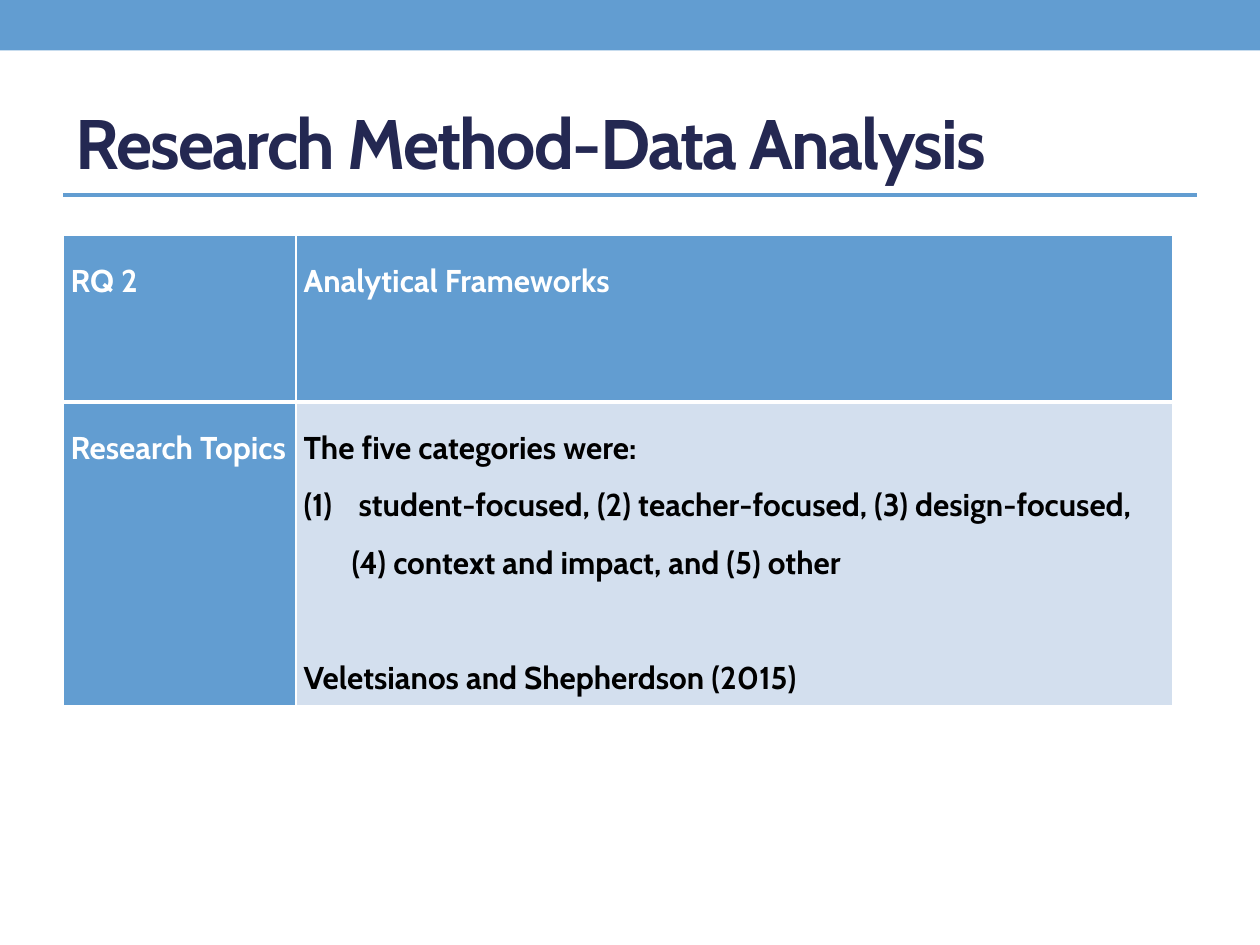
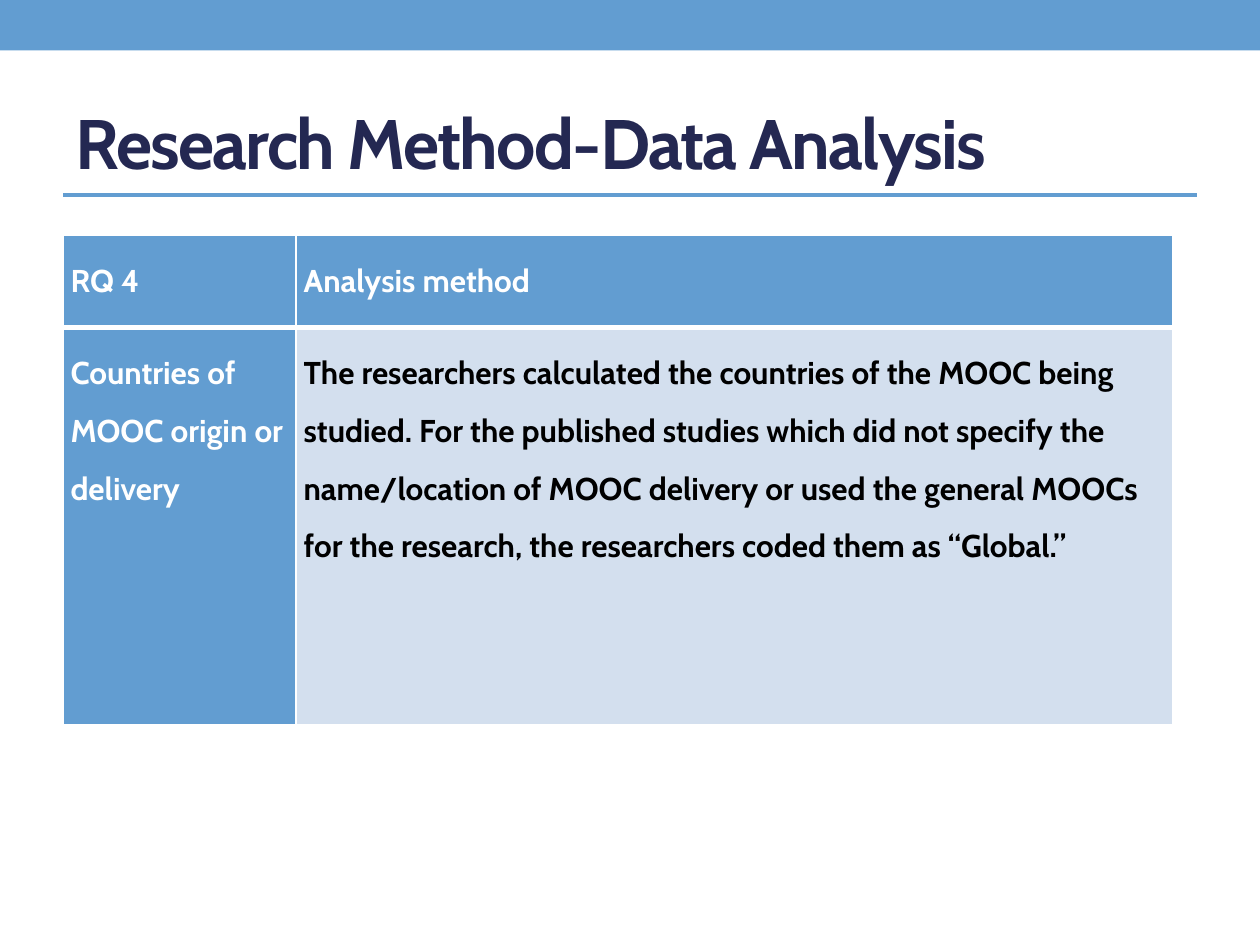
"""Build two research-method slides, each with a title and an analysis table."""
from dataclasses import dataclass

from lxml import etree
from pptx import Presentation
from pptx import util as u
from pptx.dml.color import RGBColor
from pptx.enum import shapes, text
from pptx.oxml import ns

BLUE = RGBColor(0x62, 0x9D, 0xD1)
NAVY = RGBColor(0x24, 0x28, 0x52)
PALE_BLUE = RGBColor(0xD3, 0xDF, 0xEE)
WHITE = RGBColor(0xFF, 0xFF, 0xFF)
BLACK = RGBColor(0x00, 0x00, 0x00)
FONT = "Cabin"
TITLE = "Research Method-Data Analysis"
MARGIN = u.Inches(0.5)
COLUMN_WIDTHS = (1.85, 6.96)
CELL_INSET = u.Inches(0.06)


@dataclass(frozen=True)
class Line:
    """One paragraph of a table cell."""
    words: str
    numbered: bool = False
    space_before: float = 0


@dataclass(frozen=True)
class AnalysisSlide:
    """Contents and row heights of one analysis table."""
    question: str
    method_heading: str
    topic: str
    method: tuple[Line, ...]
    row_heights: tuple[float, float]


ANALYSES = (
    AnalysisSlide(
        "RQ 2", "Analytical Frameworks", "Research Topics",
        (
            Line("The five categories were:"),
            Line(" student-focused, (2) teacher-focused, (3) design-focused, "
                 "(4) context and impact, and (5) other", numbered=True),
            Line("Veletsianos and Shepherdson (2015)", space_before=33),
        ),
        (1.32, 2.37),
    ),
    AnalysisSlide(
        "RQ 4", "Analysis method", "Countries of MOOC origin or delivery",
        (
            Line("The researchers calculated the countries of the MOOC being studied. "
                 "For the published studies which did not specify the name/location of "
                 "MOOC delivery or used the general MOOCs for the research, the "
                 "researchers coded them as “Global.”"),
        ),
        (0.73, 3.15),
    ),
)


def add_text(paragraph, words: str, *, size: float, color: RGBColor,
             line_spacing: float = 1, space_before: float = 0,
             tracking: float = 0) -> None:
    """Write bold text into a paragraph with the given format."""
    paragraph.alignment = text.PP_ALIGN.LEFT
    paragraph.line_spacing = line_spacing
    paragraph.space_before = u.Pt(space_before)
    run = paragraph.add_run()
    run.text = words
    run.font.name = FONT
    run.font.size = u.Pt(size)
    run.font.bold = True
    run.font.color.rgb = color
    if tracking:
        run.font._element.set("spc", str(round(tracking * 100)))


def number_paragraph(paragraph) -> None:
    """Give a paragraph a hanging number in parentheses."""
    properties = paragraph._p.get_or_add_pPr()
    indent = u.Inches(0.38)
    properties.set("marL", str(indent))
    properties.set("indent", str(-indent))
    bullet = etree.SubElement(properties, ns.qn("a:buAutoNum"))
    bullet.set("type", "arabicParenBoth")


def set_borders(cell, widths: dict[str, float]) -> None:
    """Draw white borders whose widths are given by side, in schema order."""
    properties = cell._tc.get_or_add_tcPr()
    for side, width in widths.items():
        border = etree.SubElement(properties, ns.qn(f"a:ln{side}"), w=str(u.Pt(width)))
        fill = etree.SubElement(border, ns.qn("a:solidFill"))
        etree.SubElement(fill, ns.qn("a:srgbClr"), val=str(WHITE))


def fill_cell(cell, lines: tuple[Line, ...], *, fill: RGBColor, color: RGBColor,
              header: bool) -> None:
    """Format a table cell and write its paragraphs."""
    set_borders(cell, {"L": 1, "R": 1, "T": 1 if header else 3, "B": 3 if header else 1})
    cell.fill.solid()
    cell.fill.fore_color.rgb = fill
    cell.margin_left = cell.margin_right = CELL_INSET
    cell.margin_top = cell.margin_bottom = CELL_INSET
    for index, line in enumerate(lines):
        frame = cell.text_frame
        paragraph = frame.add_paragraph() if index else frame.paragraphs[0]
        add_text(paragraph, line.words, size=18, color=color, line_spacing=1.5,
                 space_before=line.space_before)
        if line.numbered:
            number_paragraph(paragraph)


def add_frame(slide, slide_width: int) -> None:
    """Draw the top band, the title and the rule below it."""
    band = slide.shapes.add_shape(shapes.MSO_SHAPE.RECTANGLE, 0, 0,
                                  slide_width, u.Inches(0.4))
    band.shadow.inherit = False
    band.fill.solid()
    band.fill.fore_color.rgb = BLUE
    band.line.fill.background()

    rule_top = u.Inches(1.55)
    rule = slide.shapes.add_connector(shapes.MSO_CONNECTOR.STRAIGHT, MARGIN, rule_top,
                                      slide_width - MARGIN, rule_top)
    rule.line.color.rgb = BLUE
    rule.line.width = u.Pt(2.08)
    etree.SubElement(rule._element.spPr, ns.qn("a:effectLst"))

    title = slide.shapes.title
    title.left, title.top = MARGIN, u.Inches(0.58)
    title.width, title.height = slide_width - 2 * MARGIN, u.Inches(1.08)
    frame = title.text_frame
    frame.auto_size = text.MSO_AUTO_SIZE.NONE
    frame.vertical_anchor = text.MSO_ANCHOR.MIDDLE
    add_text(frame.paragraphs[0], TITLE, size=40, color=NAVY, tracking=-1)


def add_analysis_table(slide, analysis: AnalysisSlide) -> None:
    """Add the two-by-two table of a research question and its analysis."""
    table = slide.shapes.add_table(
        2, 2, MARGIN, u.Inches(1.87), u.Inches(sum(COLUMN_WIDTHS)),
        u.Inches(sum(analysis.row_heights))).table
    for column, width in zip(table.columns, COLUMN_WIDTHS):
        column.width = u.Inches(width)
    for row, height in zip(table.rows, analysis.row_heights):
        row.height = u.Inches(height)
    contents = (
        ((Line(analysis.question),), (Line(analysis.method_heading),)),
        ((Line(analysis.topic),), analysis.method),
    )
    for row_index, row_contents in enumerate(contents):
        for column_index, lines in enumerate(row_contents):
            is_body = bool(row_index and column_index)
            fill_cell(table.cell(row_index, column_index), lines,
                      fill=PALE_BLUE if is_body else BLUE,
                      color=BLACK if is_body else WHITE,
                      header=row_index == 0)


def main() -> None:
    """Build and save the presentation."""
    presentation = Presentation()
    presentation.slide_width = u.Inches(10)
    presentation.slide_height = u.Inches(7.5)
    title_only = presentation.slide_layouts.get_by_name("Title Only")
    for analysis in ANALYSES:
        slide = presentation.slides.add_slide(title_only)
        add_frame(slide, presentation.slide_width)
        add_analysis_table(slide, analysis)
    presentation.save("out.pptx")


if __name__ == "__main__":
    main()
